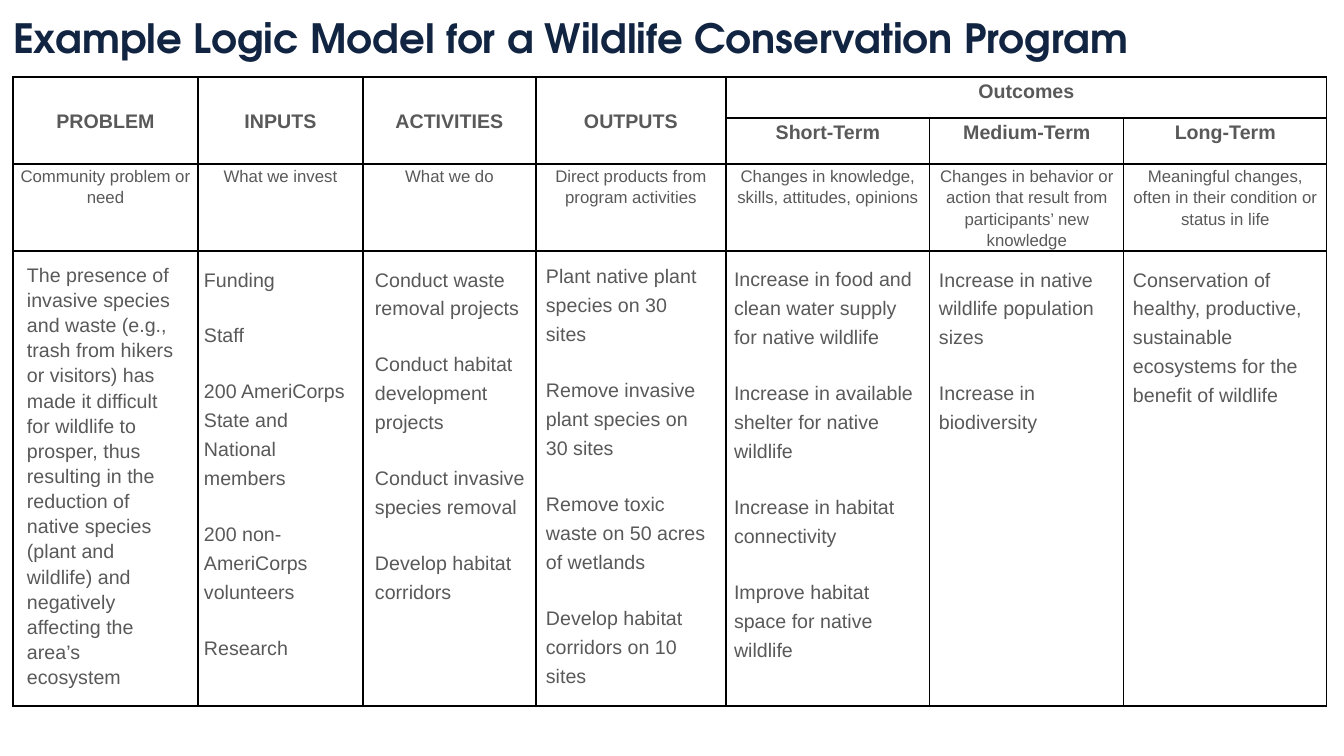
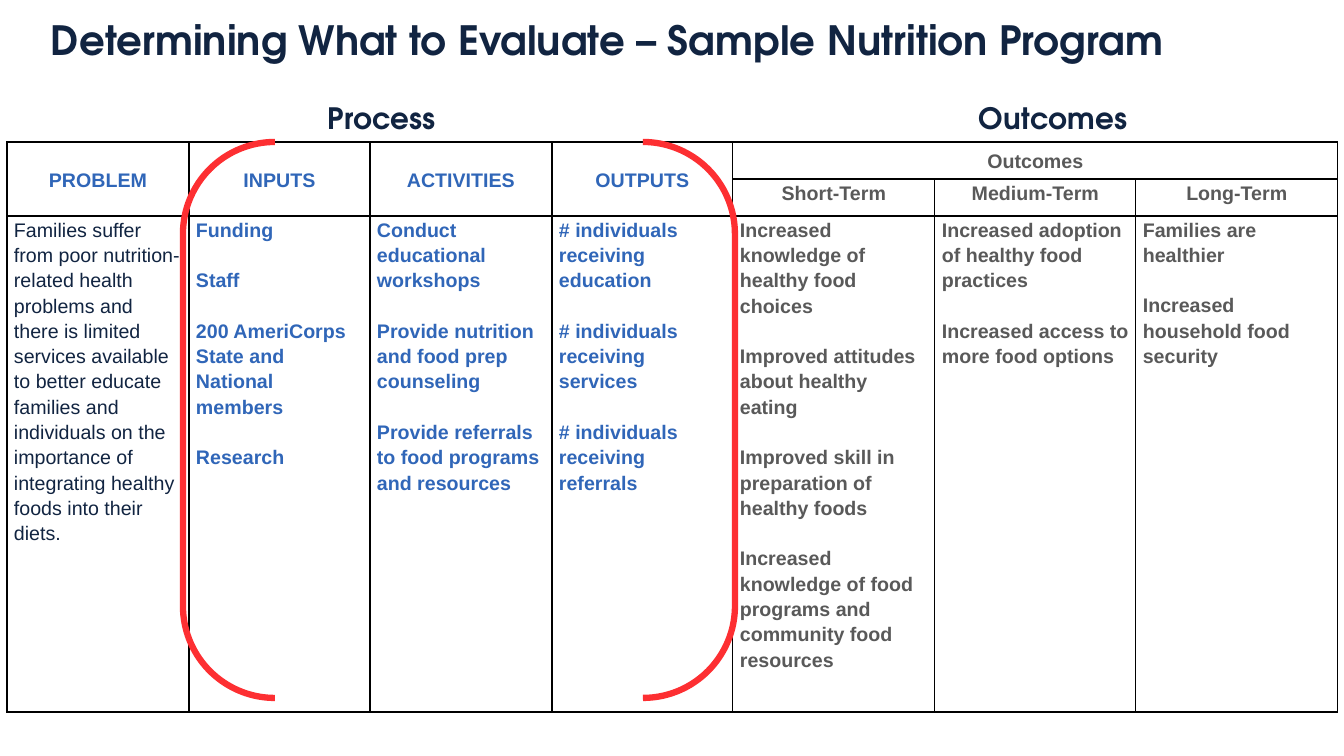
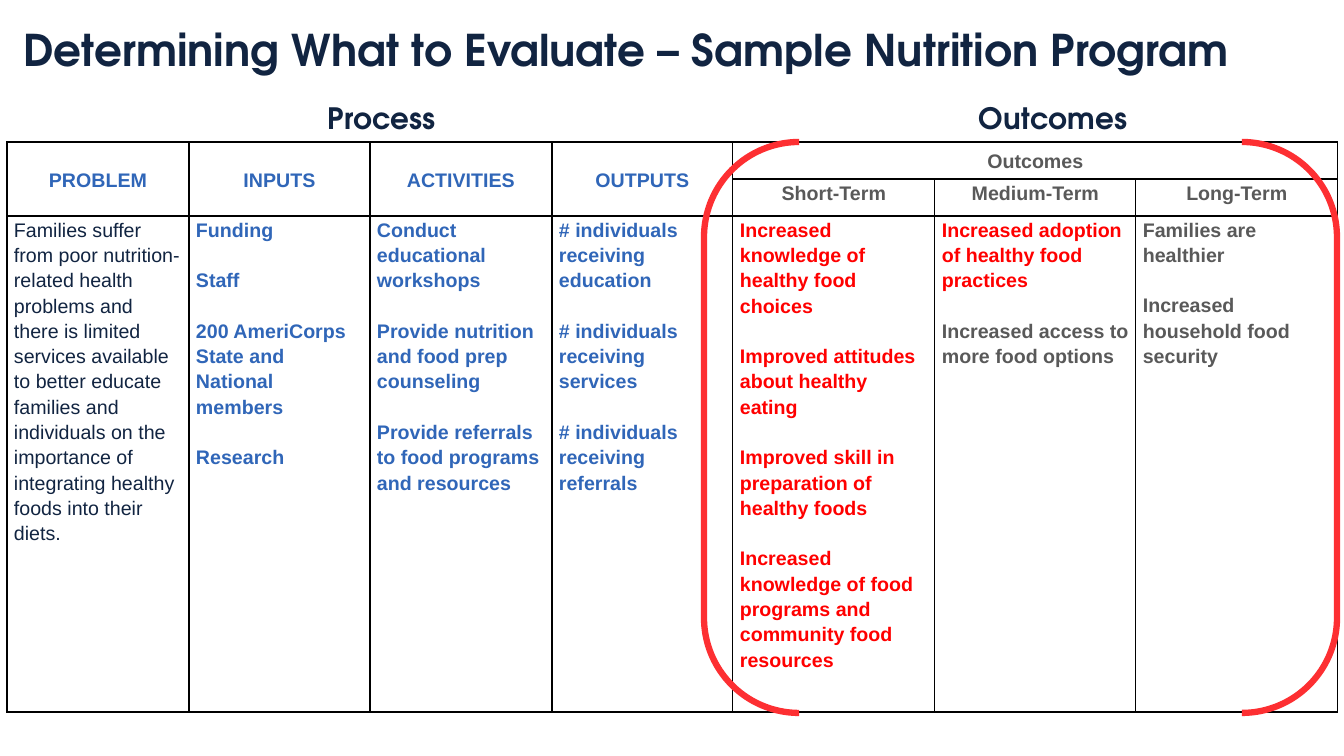
"""Build three logic model slides: one wildlife example and two nutrition evaluation views."""
from lxml import etree
from pptx import Presentation
from pptx import util as u
from pptx.dml.color import RGBColor
from pptx.enum import shapes, text
from pptx.oxml import ns

WIDTH, HEIGHT = 1344, 756
SCALE = 12192000 / WIDTH

NAVY, GRAY, BLUE, RED = "112441", "595959", "3066B8", "FF0000"
BRACKET_RED, BLACK = "FD2F32", "000000"
HEADING_FONT, BODY_FONT = "TeX Gyre Adventor", "Arial"
LEFT, CENTER = text.PP_ALIGN.LEFT, text.PP_ALIGN.CENTER

STAGES = ["PROBLEM", "INPUTS", "ACTIVITIES", "OUTPUTS"]
OUTCOMES = "Outcomes"
TERMS = ["Short-Term", "Medium-Term", "Long-Term"]

WILDLIFE_TITLE = "Example Logic Model for a Wildlife Conservation Program"
WILDLIFE_COLUMNS = [185, 165, 173, 190, 204, 194, 203]
WILDLIFE_ROWS = [41, 46, 87, 455]
WILDLIFE_HINTS = [
    "Community problem or need",
    "What we invest",
    "What we do",
    "Direct products from program activities",
    "Changes in knowledge, skills, attitudes, opinions",
    "Changes in behavior or action that result from participants’ new knowledge",
    "Meaningful changes, often in their condition or status in life",
]
WILDLIFE_NOTES = [
    ((17, 256, 171, 414), 1.07, [
        "The presence of invasive species and waste (e.g., trash from hikers or visitors) "
        "has made it difficult for wildlife to prosper, thus resulting in the reduction of "
        "native species (plant and wildlife) and negatively affecting the area’s ecosystem"]),
    ((194, 257, 171, 390), 1.23, [
        "Funding", "Staff", "200 AmeriCorps State and National members",
        "200 non-AmeriCorps volunteers", "Research"]),
    ((365, 257, 171, 336), 1.23, [
        "Conduct waste removal projects", "Conduct habitat development projects",
        "Conduct invasive species removal", "Develop habitat corridors"]),
    ((536, 254, 185, 417), 1.23, [
        "Plant native plant species on 30 sites", "Remove invasive plant species on 30 sites",
        "Remove toxic waste on 50 acres of wetlands", "Develop habitat corridors on 10 sites"]),
    ((724, 257, 206, 417), 1.23, [
        "Increase in food and clean water supply for native wildlife",
        "Increase in available shelter for native wildlife",
        "Increase in habitat connectivity", "Improve habitat space for native wildlife"]),
    ((929, 257, 206, 171), 1.23, [
        "Increase in native wildlife population sizes", "Increase in biodiversity"]),
    ((1123, 257, 206, 144), 1.23, [
        "Conservation of healthy, productive, sustainable ecosystems for the benefit of wildlife"]),
]

NUTRITION_TITLE = "Determining What to Evaluate – Sample Nutrition Program"
NUTRITION_COLUMNS = [182, 181, 182, 181, 202, 201, 202]
NUTRITION_ROWS = [36, 36, 496]
NUTRITION_CONTENT = [
    (NAVY, [
        "Families suffer from poor nutrition-related health problems and there is limited "
        "services available to better educate families and individuals on the importance of "
        "integrating healthy foods into their diets."]),
    (BLUE, ["Funding", "Staff", "200 AmeriCorps State and National members", "Research"]),
    (BLUE, ["Conduct educational workshops", "Provide nutrition and food prep counseling",
            "Provide referrals to food programs and resources"]),
    (BLUE, ["# individuals receiving education", "# individuals receiving services",
            "# individuals receiving referrals"]),
    (GRAY, ["Increased knowledge of healthy food choices",
            "Improved attitudes about healthy eating",
            "Improved skill in preparation of healthy foods",
            "Increased knowledge of food programs and community food resources"]),
    (GRAY, ["Increased adoption of healthy food practices",
            "Increased access to more food options"]),
    (GRAY, ["Families are healthier", "Increased household food security"]),
]
MEASURED_OUTCOMES = NUTRITION_CONTENT[4][1] + NUTRITION_CONTENT[5][1][:1]
NUTRITION_VIEWS = [
    {"title_box": (51, 18, 1169, 46), "title_size": 28.8, "title_spacing": 0.9,
     "bracket": (183, 142, 552, 556), "highlighted": []},
    {"title_box": (23, 29, 1232, 46), "title_size": 31.2, "title_spacing": 0.8,
     "bracket": (704, 142, 633, 571), "highlighted": MEASURED_OUTCOMES},
]
SECTION_BOX, SECTION_TAB = (328, 83, 836, 58), 651


def px(length):
    return u.Emu(round(length * SCALE))


def color(value):
    return RGBColor.from_string(value)


def set_insets(target, horizontal, vertical):
    target.margin_left = target.margin_right = px(horizontal)
    target.margin_top = target.margin_bottom = px(vertical)


def write(frame, lines, size=14, bold=False, font=BODY_FONT, align=LEFT, spacing=1.15, gap=0):
    for index, (words, tint) in enumerate(lines):
        paragraph = frame.add_paragraph() if index else frame.paragraphs[0]
        paragraph.alignment = align
        paragraph.line_spacing = spacing
        if index:
            paragraph.space_before = u.Pt(gap)
        run = paragraph.add_run()
        run.text = words
        run.font.name = font
        run.font.size = u.Pt(size)
        run.font.bold = bold
        run.font.color.rgb = color(tint)


def add_title_slide(presentation, title, box, size=28.8, spacing=0.9):
    slide = presentation.slides.add_slide(presentation.slide_layouts[5])
    shape = slide.shapes.title
    shape.left, shape.top, shape.width, shape.height = map(px, box)
    frame = shape.text_frame
    frame.word_wrap = True
    frame.auto_size = text.MSO_AUTO_SIZE.NONE
    frame.vertical_anchor = text.MSO_ANCHOR.BOTTOM
    set_insets(frame, 0, 0)
    write(frame, [(title, NAVY)], size, True, HEADING_FONT, spacing=spacing)
    return slide


def add_text_box(slide, box):
    frame = slide.shapes.add_textbox(*map(px, box)).text_frame
    frame.word_wrap = True
    return frame


def draw_borders(cell):
    properties = cell._tc.get_or_add_tcPr()
    for side in ("a:lnL", "a:lnR", "a:lnT", "a:lnB"):
        line = etree.SubElement(properties, ns.qn(side), w=str(u.Pt(1)))
        fill = etree.SubElement(line, ns.qn("a:solidFill"))
        etree.SubElement(fill, ns.qn("a:srgbClr"), val=BLACK)


def add_model_table(slide, left, top, columns, rows, stage_color, inset, header_insets):
    box = (left, top, sum(columns), sum(rows))
    table = slide.shapes.add_table(len(rows), len(columns), *map(px, box)).table
    table.first_row = table.horz_banding = False
    for column, width in zip(table.columns, columns):
        column.width = px(width)
    for row, height in zip(table.rows, rows):
        row.height = px(height)
    for cell in table.iter_cells():
        draw_borders(cell)
        cell.fill.background()
        set_insets(cell, inset, 0)
    first_term, last = len(STAGES), len(columns) - 1
    for index, stage in enumerate(STAGES):
        cell = table.cell(0, index)
        cell.merge(table.cell(1, index))
        cell.vertical_anchor = text.MSO_ANCHOR.MIDDLE
        set_insets(cell, *header_insets)
        write(cell.text_frame, [(stage, stage_color)], bold=True, align=CENTER)
    cell = table.cell(0, first_term)
    cell.merge(table.cell(0, last))
    set_insets(cell, *header_insets)
    write(cell.text_frame, [(OUTCOMES, GRAY)], bold=True, align=CENTER)
    for index, term in enumerate(TERMS, first_term):
        write(table.cell(1, index).text_frame, [(term, GRAY)], bold=True, align=CENTER)
    return table


def add_section_labels(slide):
    frame = add_text_box(slide, SECTION_BOX)
    set_insets(frame, 0, 0)
    properties = frame.paragraphs[0]._p.get_or_add_pPr()
    tabs = etree.SubElement(properties, ns.qn("a:tabLst"))
    etree.SubElement(tabs, ns.qn("a:tab"), pos=str(px(SECTION_TAB)), algn="l")
    write(frame, [("Process\tOutcomes", NAVY)], 21, True, HEADING_FONT, spacing=1.5)


def add_bracket(slide, box):
    shape = slide.shapes.add_shape(shapes.MSO_SHAPE.DOUBLE_BRACKET, *map(px, box))
    shape.shadow.inherit = False
    shape.fill.background()
    shape.line.color.rgb = color(BRACKET_RED)
    shape.line.width = u.Pt(4.5)


def build_wildlife(presentation):
    slide = add_title_slide(presentation, WILDLIFE_TITLE, (13, 16, 1289, 46))
    table = add_model_table(slide, 13, 77, WILDLIFE_COLUMNS, WILDLIFE_ROWS, GRAY, 6, (6, 0))
    for index, hint in enumerate(WILDLIFE_HINTS):
        write(table.cell(2, index).text_frame, [(hint, GRAY)], 12, align=CENTER)
    for box, spacing, notes in WILDLIFE_NOTES:
        frame = add_text_box(slide, box)
        set_insets(frame, 10, 5)
        write(frame, [(note, GRAY) for note in notes], spacing=spacing, gap=19.3)


def build_nutrition(presentation, view):
    slide = add_title_slide(presentation, NUTRITION_TITLE, view["title_box"],
                            view["title_size"], view["title_spacing"])
    add_section_labels(slide)
    table = add_model_table(slide, 7, 142, NUTRITION_COLUMNS, NUTRITION_ROWS, BLUE, 7, (11, 5))
    for index, (tint, items) in enumerate(NUTRITION_CONTENT):
        lines = [(item, RED if item in view["highlighted"] else tint) for item in items]
        write(table.cell(2, index).text_frame, lines, bold=index > 0, gap=18)
    add_bracket(slide, view["bracket"])


def main():
    presentation = Presentation()
    presentation.slide_width, presentation.slide_height = px(WIDTH), px(HEIGHT)
    build_wildlife(presentation)
    for view in NUTRITION_VIEWS:
        build_nutrition(presentation, view)
    presentation.save("out.pptx")


if __name__ == "__main__":
    main()
